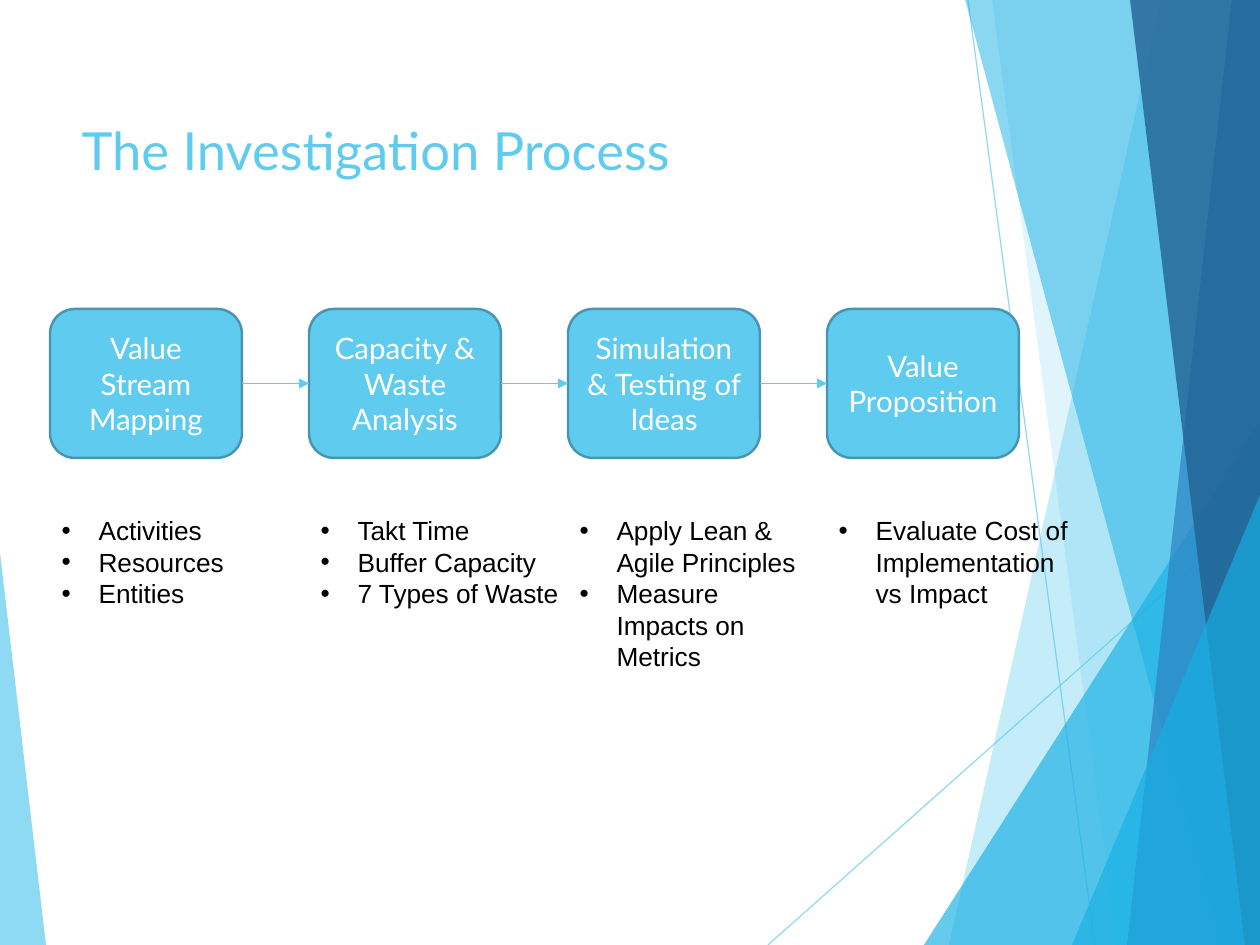
from dataclasses import dataclass

from lxml import etree
from pptx import Presentation
from pptx.dml.color import RGBColor
from pptx.enum.shapes import MSO_CONNECTOR, MSO_SHAPE
from pptx.enum.text import MSO_ANCHOR, PP_ALIGN
from pptx.oxml.ns import qn
from pptx.util import Pt

PX = 7742
WIDE, HIGH = 1260, 945
LINE = MSO_CONNECTOR.STRAIGHT
ROUND = MSO_SHAPE.ROUNDED_RECTANGLE
WEDGE = MSO_SHAPE.ISOSCELES_TRIANGLE
CENTER, TOP, MIDDLE = PP_ALIGN.CENTER, MSO_ANCHOR.TOP, MSO_ANCHOR.MIDDLE
EAST, WEST = 3, 1


@dataclass(frozen=True)
class Theme:
    sky: str = "5FCBEF"
    azure: str = "17B0E4"
    blue: str = "2E83C3"
    navy: str = "226292"
    edge: str = "4696B1"
    white: str = "FFFFFF"
    black: str = "000000"
    head: str = "Lato"
    body: str = "Arial"
    title: int = 32
    step: int = 18
    note: int = 16


def fade(color, alpha):
    """Set the opacity, in percent, of a solid colour element."""
    node = next(color.iter(qn("a:srgbClr")))
    etree.SubElement(node, qn("a:alpha"), val=str(alpha * 1000))


class Deck:
    def __init__(self, theme):
        self.theme = theme
        self.file = Presentation()
        self.file.slide_width = WIDE * PX
        self.file.slide_height = HIGH * PX
        self.slide = self.file.slides.add_slide(self.file.slide_layouts[6])
        self.shapes = self.slide.shapes

    def paint(self, shape, color, alpha=100):
        shape.shadow.inherit = False
        shape.fill.solid()
        shape.fill.fore_color.rgb = RGBColor.from_string(color)
        shape.line.fill.background()
        if alpha < 100:
            fade(shape.fill._xPr, alpha)

    def pane(self, top, foot, color, alpha):
        """Full-height band from a slanted left side to the slide's right edge."""
        form = self.shapes.build_freeform(top, -1, scale=PX)
        form.add_line_segments([(WIDE, -1), (WIDE, HIGH), (foot, HIGH)])
        self.paint(form.convert_to_shape(), color, alpha)

    def wedge(self, left, top, width, apex, color, alpha):
        """Triangle standing on the slide's bottom edge."""
        box = (n * PX for n in (left, top, width, HIGH - top))
        shape = self.shapes.add_shape(WEDGE, *box)
        shape.adjustments[0] = apex
        self.paint(shape, color, alpha)

    def line(self, x1, y1, x2, y2, width):
        ends = (n * PX for n in (x1, y1, x2, y2))
        line = self.shapes.add_connector(LINE, *ends)
        line.line.color.rgb = RGBColor.from_string(self.theme.sky)
        line.line.width = Pt(width)
        etree.SubElement(line._element.spPr, qn("a:effectLst"))
        return line

    def ray(self, x1, y1, x2, y2):
        line = self.line(x1, y1, x2, y2, 0.75)
        fade(line.line._ln, 70)

    def arrow(self, start, end):
        line = self.line(0, 0, 0, 0, 1)
        line.begin_connect(start, EAST)
        line.end_connect(end, WEST)
        etree.SubElement(line.line._ln, qn("a:tailEnd"), type="triangle")

    def run(self, para, text, font, size, color):
        run = para.add_run()
        run.text = text
        run.font.name = font
        run.font.size = Pt(size)
        run.font.color.rgb = RGBColor.from_string(color)

    def frame(self, left, top, width, height, wrap=True):
        box = (n * PX for n in (left, top, width, height))
        frame = self.shapes.add_textbox(*box).text_frame
        frame.word_wrap = wrap
        frame.vertical_anchor = TOP
        return frame

    def title(self, text, *box):
        look = self.theme
        para = self.frame(*box).paragraphs[0]
        self.run(para, text, look.head, look.title, look.sky)

    def step(self, text, *box):
        look = self.theme
        shape = self.shapes.add_shape(ROUND, *(n * PX for n in box))
        self.paint(shape, look.sky)
        shape.line.color.rgb = RGBColor.from_string(look.edge)
        shape.line.width = Pt(1.5)
        frame = shape.text_frame
        frame.word_wrap = True
        frame.vertical_anchor = MIDDLE
        para = frame.paragraphs[0]
        para.alignment = CENTER
        self.run(para, text, look.head, look.step, look.white)
        return shape

    def notes(self, items, wrap, *box):
        look = self.theme
        frame = self.frame(*box, wrap=wrap)
        for i, item in enumerate(items):
            para = frame.add_paragraph() if i else frame.paragraphs[0]
            props = para._p.get_or_add_pPr()
            props.set("marL", str(37 * PX))
            props.set("indent", str(-37 * PX))
            etree.SubElement(props, qn("a:buFont"), typeface=look.body)
            etree.SubElement(props, qn("a:buChar"), char="•")
            self.run(para, item, look.body, look.note, look.black)


STEPS = [
    ("Value Stream Mapping", ["Activities", "Resources", "Entities"], 188, False),
    ("Capacity & Waste Analysis",
     ["Takt Time", "Buffer Capacity", "7 Types of Waste"], 264, False),
    ("Simulation & Testing of Ideas",
     ["Apply Lean & Agile Principles", "Measure Impacts on Metrics"], 242, True),
    ("Value Proposition",
     ["Evaluate Cost of Implementation vs Impact"], 260, True),
]
LEFT, PITCH = 50, 259


def backdrop(deck):
    look = deck.theme
    deck.ray(968, 0, 1095, HIGH)
    deck.ray(WIDE, 508, 768, HIGH)
    deck.pane(1161, 949, look.sky, 36)
    deck.pane(992, 1117, look.sky, 20)
    deck.wedge(924, 420, 336, 1, look.azure, 66)
    deck.pane(965, 1220, look.azure, 50)
    deck.pane(1232, 1127, look.blue, 70)
    deck.pane(1130, 1245, look.navy, 80)
    deck.wedge(1072, 495, 188, 1, look.azure, 66)
    deck.wedge(0, 553, 46, 0, look.sky, 70)


def main():
    deck = Deck(Theme())
    backdrop(deck)
    deck.title("The Investigation Process", 70, 112, 888, 92)
    boxes = []
    for i, (name, items, width, wrap) in enumerate(STEPS):
        left = LEFT + i * PITCH
        boxes.append(deck.step(name, left, 309, 192, 149))
        deck.notes(items, wrap, left, 509, width, 110)
    for start, end in zip(boxes, boxes[1:]):
        deck.arrow(start, end)
    deck.file.save("out.pptx")


if __name__ == "__main__":
    main()
